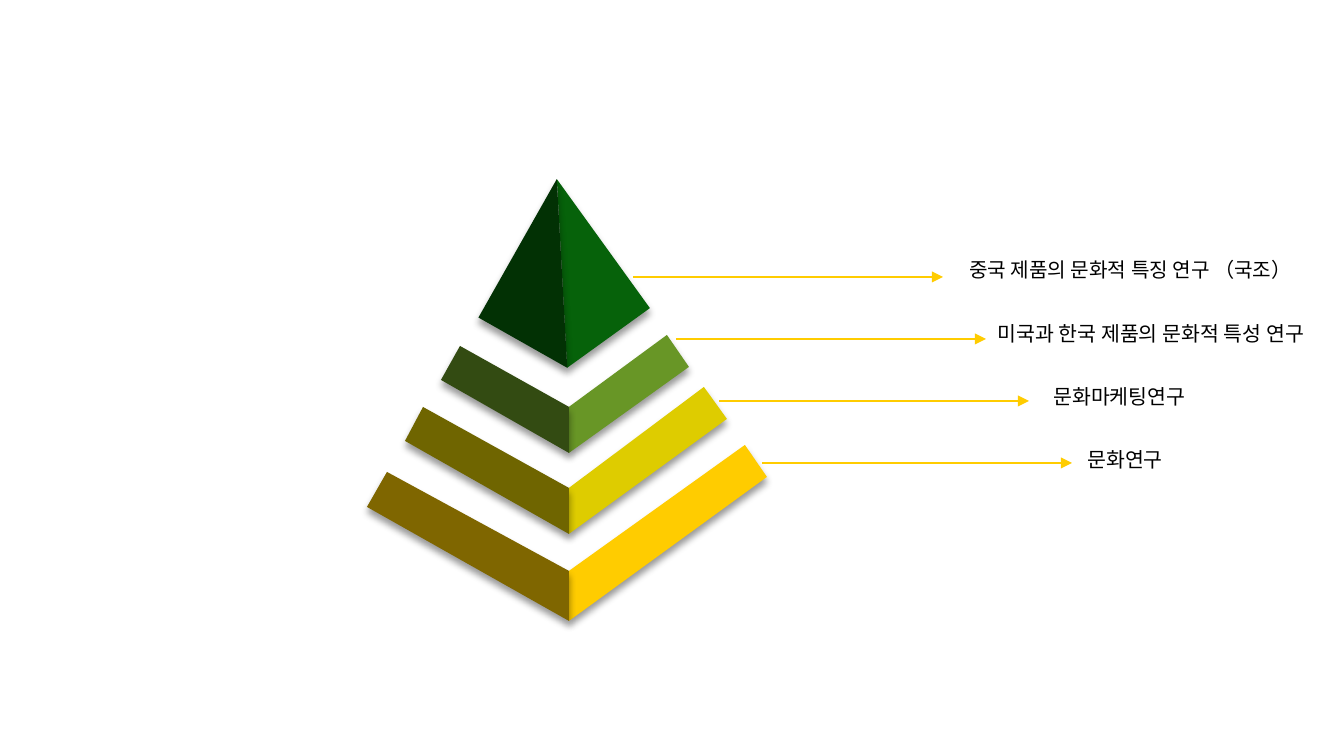
from pptx import Presentation, util as u
from pptx.dml.color import RGBColor
from pptx.enum import shapes as sh, text as tx
from pptx.oxml import parse_xml
from pptx.oxml.ns import nsdecls, qn

# Content: label, left edge, type size
LABELS = [
    ("중국 제품의 문화적 특징 연구 （국조）", 956, 10.8),
    ("미국과 한국 제품의 문화적 특성 연구", 984, 11),
    ("문화마케팅연구", 1040, 11),
    ("문화연구", 1074, 11),
]
# Top faces: colour, rotation, mirrored
FACES = [("06620A", 324.2, True), ("023104", 29.5, False)]
# Bands: ridge top and bottom, then (colour, lower and upper outer corner) per side
BANDS = [
    (407, 453, [("689626", (689, 367), (667, 335)),
                ("334B12", (441, 380), (460, 346))]),
    (488, 534, [("DECC00", (727, 419), (704, 387)),
                ("6F6500", (405, 441), (423, 407))]),
    (571, 621, [("FFCC00", (767, 477), (745, 445)),
                ("7F6600", (367, 507), (387, 472))]),
]
THEME = {"font": "Noto Sans CJK SC", "ink": "000000", "arrow": "FFCC00",
         "line": 0.75}
RIDGE = 569
ARROW = {"x": 633, "y": 277, "dx": 43, "dy": 62, "len": 310}
LABEL = {"y": 251, "dy": 63, "w": 392, "h": 47}


def px(n):
    return u.Emu(round(n * 914400 / 134.4))


def rgb(code):
    return RGBColor.from_string(code)


def paint(shape, color):
    shape.fill.solid()
    shape.fill.fore_color.rgb = rgb(color)
    shape.line.fill.background()
    shape.shadow.inherit = False
    glow = shape._element.spPr.find(qn("a:effectLst"))
    glow.append(parse_xml(
        f'<a:outerShdw {nsdecls("a")} blurRad="{u.Pt(4)}" dist="{u.Pt(3)}" '
        'dir="5400000" algn="t" rotWithShape="0"><a:srgbClr val="000000">'
        '<a:alpha val="40000"/></a:srgbClr></a:outerShdw>'))


prs = Presentation()
prs.slide_width, prs.slide_height = px(1344), px(756)
slide = prs.slides.add_slide(prs.slide_layouts[6])
art = slide.shapes

# Pyramid top
for color, turn, flip in FACES:
    face = art.add_shape(sh.MSO_SHAPE.RIGHT_TRIANGLE,
                         px(511), px(194), px(102), px(159))
    face.rotation = turn
    if flip:
        face._element.spPr.xfrm.set("flipH", "1")
    paint(face, color)

# Bands
for top, base, sides in BANDS:
    for color, low, high in sides:
        pen = art.build_freeform(RIDGE, top, scale=px(1000) / 1000)
        pen.add_line_segments([(RIDGE, base), low, high], close=True)
        paint(pen.convert_to_shape(), color)

# Arrows
for i in range(len(LABELS)):
    x, y = ARROW["x"] + i * ARROW["dx"], ARROW["y"] + i * ARROW["dy"]
    arrow = art.add_connector(sh.MSO_CONNECTOR.STRAIGHT, px(x), px(y),
                              px(x + ARROW["len"]), px(y))
    arrow.line.color.rgb = rgb(THEME["arrow"])
    arrow.line.width = u.Pt(THEME["line"])
    arrow.line._get_or_add_ln().append(
        parse_xml(f'<a:tailEnd {nsdecls("a")} type="triangle"/>'))
    arrow._element.spPr.append(parse_xml(f'<a:effectLst {nsdecls("a")}/>'))

# Labels
for i, (words, x, size) in enumerate(LABELS):
    box = art.add_textbox(px(x), px(LABEL["y"] + i * LABEL["dy"]),
                          px(LABEL["w"]), px(LABEL["h"]))
    frame = box.text_frame
    for key, val in {"word_wrap": True, "auto_size": tx.MSO_AUTO_SIZE.NONE,
                     "vertical_anchor": tx.MSO_ANCHOR.TOP}.items():
        setattr(frame, key, val)
    run = frame.paragraphs[0].add_run()
    run.text = words
    for key, val in {"name": THEME["font"], "size": u.Pt(size)}.items():
        setattr(run.font, key, val)
    run.font.color.rgb = rgb(THEME["ink"])
    run._r.get_or_add_rPr().append(
        parse_xml(f'<a:ea {nsdecls("a")} typeface="{THEME["font"]}"/>'))

prs.save("out.pptx")
